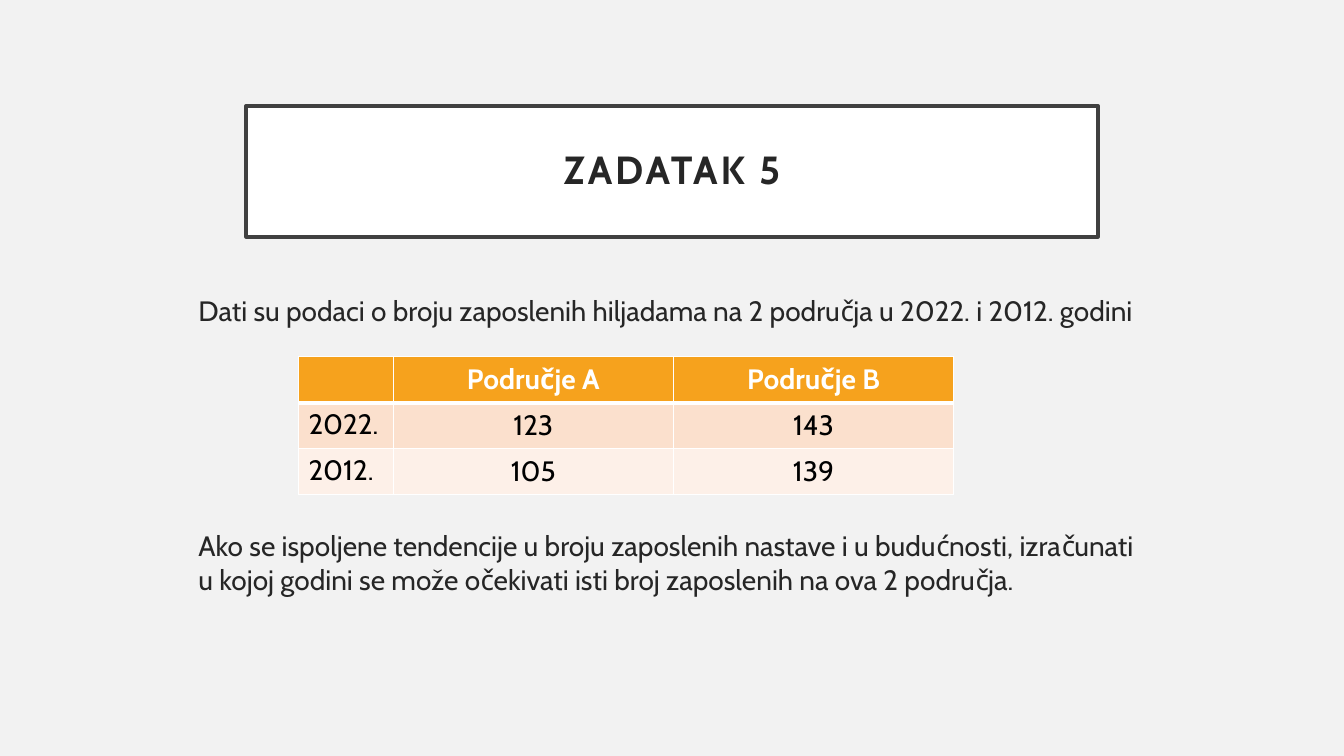
from lxml.etree import SubElement
from pptx import Presentation
from pptx.dml.color import RGBColor
from pptx.enum.shapes import MSO_SHAPE
from pptx.enum.text import MSO_ANCHOR, PP_ALIGN
from pptx.oxml.ns import qn
from pptx.util import Inches, Pt

FONT = "Cabin"
COLORS = {
    "background": "F2F2F2",
    "white": "FFFFFF",
    "frame": "404040",
    "text": "262626",
    "black": "000000",
    "header": "F6A21D",
    "band_dark": "FBE0CD",
    "band_light": "FDF0E8",
}
EMPLOYMENT = [
    ["", "Područje A", "Područje B"],
    ["2022.", "123", "143"],
    ["2012.", "105", "139"],
]
BODY = [
    "Dati su podaci o broju zaposlenih hiljadama na 2 područja u 2022. i 2012. godini",
    "Ako se ispoljene tendencije u broju zaposlenih nastave i u budućnosti, izračunati "
    "u kojoj godini se može očekivati isti broj zaposlenih na ova 2 područja.",
]


def rgb(name):
    return RGBColor.from_string(COLORS[name])


def paint(fill, color):
    fill.solid()
    fill.fore_color.rgb = rgb(color)


def add_run(paragraph, text, color, size=20, bold=False):
    run = paragraph.add_run()
    run.text = text
    run.font.name = FONT
    run.font.size = Pt(size)
    run.font.bold = bold
    run.font.color.rgb = rgb(color)
    return run


def add_title(slide, text):
    shape = slide.shapes.add_shape(
        MSO_SHAPE.RECTANGLE, Inches(2.44), Inches(1.05), Inches(8.45), Inches(1.3))
    shape.shadow.inherit = False
    paint(shape.fill, "white")
    shape.line.color.rgb = rgb("frame")
    shape.line.width = Pt(2.5)
    frame = shape.text_frame
    frame.word_wrap = True
    frame.vertical_anchor = MSO_ANCHOR.MIDDLE
    paragraph = frame.paragraphs[0]
    paragraph.alignment = PP_ALIGN.CENTER
    paragraph.line_spacing = 0.9
    run = add_run(paragraph, text, "text", size=28, bold=True)
    # Letter spacing, in hundredths of a point
    run._r.get_or_add_rPr().set("spc", "200")


def add_body(slide, texts):
    box = slide.shapes.add_textbox(Inches(1.87), Inches(2.86), Inches(9.59), Inches(3.59))
    frame = box.text_frame
    frame.word_wrap = True
    for index, text in enumerate(texts):
        paragraph = frame.add_paragraph() if index else frame.paragraphs[0]
        if index:
            # Leaves room for the table
            paragraph.space_before = Pt(144)
        add_run(paragraph, text, "text")


def set_borders(cell, widths):
    properties = cell._tc.get_or_add_tcPr()
    for position, (side, width) in enumerate(widths.items()):
        line = properties.makeelement(qn(f"a:{side}"), {"w": str(Pt(width))})
        fill = SubElement(line, qn("a:solidFill"))
        SubElement(fill, qn("a:srgbClr"), val=COLORS["white"])
        properties.insert(position, line)


def add_employment_table(slide, rows):
    table = slide.shapes.add_table(
        len(rows), len(rows[0]), Inches(2.96), Inches(3.54), Inches(6.5), Inches(1.37)).table
    for column, width in zip(table.columns, (0.94, 2.78, 2.78)):
        column.width = Inches(width)
    row_fills = ("header", "band_dark", "band_light")
    for row_index, (values, fill) in enumerate(zip(rows, row_fills)):
        is_header = row_index == 0
        for column_index, text in enumerate(values):
            cell = table.cell(row_index, column_index)
            paint(cell.fill, fill)
            # Thick rule between the header and the first data row
            set_borders(cell, {"lnL": 1, "lnR": 1,
                               "lnT": 3 if row_index == 1 else 1,
                               "lnB": 3 if is_header else 1})
            paragraph = cell.text_frame.paragraphs[0]
            if column_index:
                cell.vertical_anchor = MSO_ANCHOR.MIDDLE
                paragraph.alignment = PP_ALIGN.CENTER
            if text:
                add_run(paragraph, text, "white" if is_header else "black", bold=is_header)


def main():
    presentation = Presentation()
    presentation.slide_width = Inches(13.33)
    presentation.slide_height = Inches(7.5)
    slide = presentation.slides.add_slide(presentation.slide_layouts[6])
    paint(slide.background.fill, "background")

    add_title(slide, "ZADATAK 5")
    add_body(slide, BODY)
    add_employment_table(slide, EMPLOYMENT)

    presentation.save("out.pptx")


if __name__ == "__main__":
    main()
